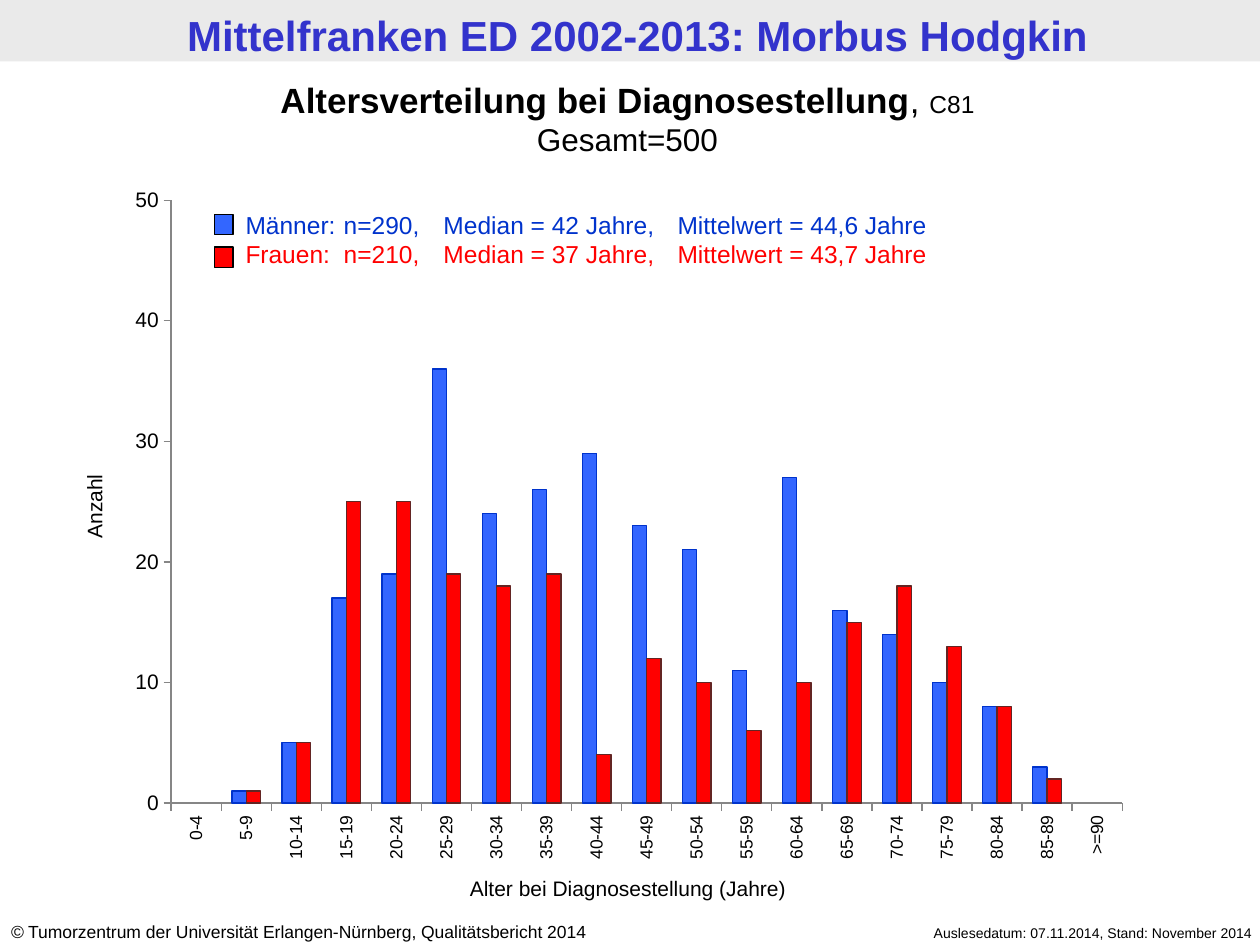
"""Build the slide on age at diagnosis of Morbus Hodgkin."""
from dataclasses import dataclass, field
from typing import Any

from lxml import etree
from pptx import Presentation
from pptx.chart.data import CategoryChartData
from pptx.dml.color import RGBColor
from pptx.enum.chart import XL_CHART_TYPE, XL_TICK_MARK
from pptx.enum.shapes import MSO_SHAPE
from pptx.enum.text import MSO_ANCHOR, MSO_AUTO_SIZE, PP_ALIGN
from pptx.oxml import parse_xml
from pptx.oxml.ns import nsdecls, qn
from pptx.util import Cm, Pt

LEFT, MID, RIGHT = PP_ALIGN.LEFT, PP_ALIGN.CENTER, PP_ALIGN.RIGHT
RECT, COLUMN = MSO_SHAPE.RECTANGLE, XL_CHART_TYPE.COLUMN_CLUSTERED
TICK_OUT, TICK_NONE = XL_TICK_MARK.OUTSIDE, XL_TICK_MARK.NONE
BOTTOM, FIXED = MSO_ANCHOR.BOTTOM, MSO_AUTO_SIZE.NONE

BLACK = RGBColor(0x00, 0x00, 0x00)
WHITE = RGBColor(0xFF, 0xFF, 0xFF)
PALE = RGBColor(0xEA, 0xEA, 0xEA)
GREY = RGBColor(0x86, 0x86, 0x86)
INDIGO = RGBColor(0x33, 0x33, 0xCC)
NAVY = RGBColor(0x00, 0x33, 0xCC)
BLUE = RGBColor(0x33, 0x66, 0xFF)
RED = RGBColor(0xFF, 0x00, 0x00)
MAROON = RGBColor(0x63, 0x25, 0x23)

FACE = "Arial"
TABS = (1.98, 3.99, 8.71)
AGES = [f"{low}-{low + 4}" for low in range(0, 90, 5)] + [">=90"]


@dataclass
class Run:
    """A piece of text in one format."""
    text: str
    size: float
    color: RGBColor = BLACK
    style: dict[str, Any] = field(default_factory=dict)


@dataclass
class Note:
    """A text box with its lines of runs."""
    box: tuple[float, ...]
    lines: list[list[Run]]
    align: Any = LEFT
    turn: int = 0
    tabs: tuple[float, ...] = ()


@dataclass
class Group:
    """The counts and colours of one sex."""
    name: str
    vals: list[int | None]
    fill: RGBColor
    edge: RGBColor
    ink: RGBColor
    facts: str
    top: float


GROUPS = [
    Group("Männer", [None, 1, 5, 17, 19, 36, 24, 26, 29, 23, 21, 11, 27,
                     16, 14, 10, 8, 3, None], BLUE, NAVY, NAVY,
          "n=290, \tMedian = 42 Jahre, \tMittelwert = 44,6 Jahre", 4.32),
    Group("Frauen", [None, 1, 5, 25, 25, 19, 18, 19, 4, 12, 10, 6, 10,
                     15, 18, 13, 8, 2, None], RED, MAROON, RED,
          "n=210, \tMedian = 37 Jahre,\tMittelwert = 43,7 Jahre", 4.98),
]

NOTES = [
    Note((16.89, 18.52, 8.61, 0.61),
         [[Run("Auslesedatum: 07.11.2014, Stand: November 2014", 8)]], RIGHT),
    Note((-0.03, 18.44, 13.31, 0.69),
         [[Run("©", 10, style={"italic": True}),
           Run(" Tumorzentrum der Universität Erlangen-Nürnberg, "
               "Qualitätsbericht 2014", 10)]]),
    Note((-0.1, 1.45, 25.5, 1.88),
         [[Run("Altersverteilung bei Diagnosestellung", 20,
               style={"bold": True}), Run(", ", 20), Run("C81", 14)],
          [Run("Gesamt=500", 18)]], MID),
    Note((4.7, 4.11, 17.4, 1.45),
         [[Run(f"{g.name}: \t{g.facts}", 14, g.ink)] for g in GROUPS],
         tabs=TABS),
    Note((8.76, 17.53, 7.8, 0.76),
         [[Run("Alter bei Diagnosestellung (Jahre)", 12)]], MID),
    Note((-1.42, 9.83, 6.63, 0.76), [[Run("Anzahl", 12)]], MID, 270),
]


def put(item: Any, vals: dict[str, Any]) -> None:
    """Set each named value on the item."""
    for key, val in vals.items():
        setattr(item, key, val)


def ink(font: Any, size: float, color: RGBColor, **style: Any) -> None:
    """Format a font."""
    put(font, {"name": FACE, "size": Pt(size), **style})
    font.color.rgb = color


def paint(item: Any, fill: RGBColor, edge: RGBColor | None = None) -> None:
    """Fill a shape or series and draw or hide its outline."""
    item.fill.solid()
    item.fill.fore_color.rgb = fill
    if edge is None:
        item.line.fill.background()
    else:
        item.line.color.rgb = edge
        item.line.width = Pt(0.75)


def add_box(slide: Any, box: tuple[float, ...], fill: RGBColor,
            edge: RGBColor | None = None) -> Any:
    """Add a plain rectangle."""
    rect = slide.shapes.add_shape(RECT, *map(Cm, box))
    rect.shadow.inherit = False
    paint(rect, fill, edge)
    return rect


def add_head(slide: Any) -> None:
    """Place the title on its band."""
    band = add_box(slide, (0, 0, 25.4, 1.24), PALE)
    title = slide.shapes.title
    title.element.addprevious(band.element)
    put(title, dict(zip(("left", "top", "width", "height"),
                        map(Cm, (0.15, 0.07, 25.4, 1.24)))))
    frame = title.text_frame
    put(frame, {"auto_size": FIXED, "vertical_anchor": BOTTOM,
                "margin_top": Cm(0.1), "margin_bottom": Cm(0.1)})
    para = frame.paragraphs[0]
    para.alignment = MID
    run = para.add_run()
    run.text = "Mittelfranken ED 2002-2013: Morbus Hodgkin"
    ink(run.font, 24, INDIGO, bold=True)


def add_note(slide: Any, note: Note) -> None:
    """Add a text box."""
    shape = slide.shapes.add_textbox(*map(Cm, note.box))
    shape.rotation = note.turn
    frame = shape.text_frame
    frame.word_wrap = True
    for i, line in enumerate(note.lines):
        para = frame.add_paragraph() if i else frame.paragraphs[0]
        para.alignment = note.align
        if note.tabs:
            stops = etree.SubElement(para._p.get_or_add_pPr(), qn("a:tabLst"))
            for pos in note.tabs:
                etree.SubElement(stops, qn("a:tab"), pos=str(Cm(pos)), algn="l")
        for part in line:
            run = para.add_run()
            run.text = part.text
            ink(run.font, part.size, part.color, **part.style)


def set_plot(chart: Any) -> None:
    """Fix the plot area and turn the age labels."""
    area = chart.element.xpath(".//c:plotArea")[0]
    for old in area.findall(qn("c:layout")):
        area.remove(old)
    sides = "".join(f'<c:{key} val="{val}"/>' for key, val in (
        ("layoutTarget", "inner"), ("xMode", "edge"), ("yMode", "edge"),
        ("x", 0.055), ("y", 0.036), ("w", 0.925), ("h", 0.862)))
    area.insert(0, parse_xml(f'<c:layout {nsdecls("c")}><c:manualLayout>'
                             f'{sides}</c:manualLayout></c:layout>'))
    area.xpath("./c:catAx/c:txPr/a:bodyPr")[0].set("rot", "-5400000")
    area.append(parse_xml(f'<c:spPr {nsdecls("c", "a")}><a:solidFill>'
                          f'<a:srgbClr val="{WHITE}"/></a:solidFill></c:spPr>'))


def add_bars(slide: Any) -> None:
    """Add the column chart."""
    data = CategoryChartData()
    data.categories = AGES
    for group in GROUPS:
        data.add_series(group.name, group.vals)
    box = map(Cm, (2.31, 3.53, 20.73, 14.1))
    chart = slide.shapes.add_chart(COLUMN, *box, data).chart
    put(chart, {"has_legend": False, "has_title": False})
    ink(chart.font, 18, BLACK, name="Calibri")
    plot = chart.plots[0]
    put(plot, {"gap_width": 150, "overlap": 0, "vary_by_categories": False})
    for bars, group in zip(plot.series, GROUPS):
        paint(bars.format, group.fill, group.edge)
        bars.invert_if_negative = False
    put(chart.value_axis, {"minimum_scale": 0, "maximum_scale": 50,
                           "major_unit": 10})
    for axis, size in ((chart.category_axis, 10), (chart.value_axis, 12)):
        put(axis, {"has_major_gridlines": False, "major_tick_mark": TICK_OUT,
                   "minor_tick_mark": TICK_NONE})
        ink(axis.tick_labels.font, size, BLACK)
        axis.format.line.color.rgb = GREY
    set_plot(chart)


def main() -> None:
    """Build and save the deck."""
    deck = Presentation()
    put(deck, {"slide_width": Cm(25.4), "slide_height": Cm(19.05)})
    slide = deck.slides.add_slide(deck.slide_layouts[5])
    add_head(slide)
    add_bars(slide)
    for note in NOTES:
        add_note(slide, note)
    for group in GROUPS:
        add_box(slide, (4.32, group.top, 0.38, 0.41), group.fill, BLACK)
    deck.save("out.pptx")


if __name__ == "__main__":
    main()
